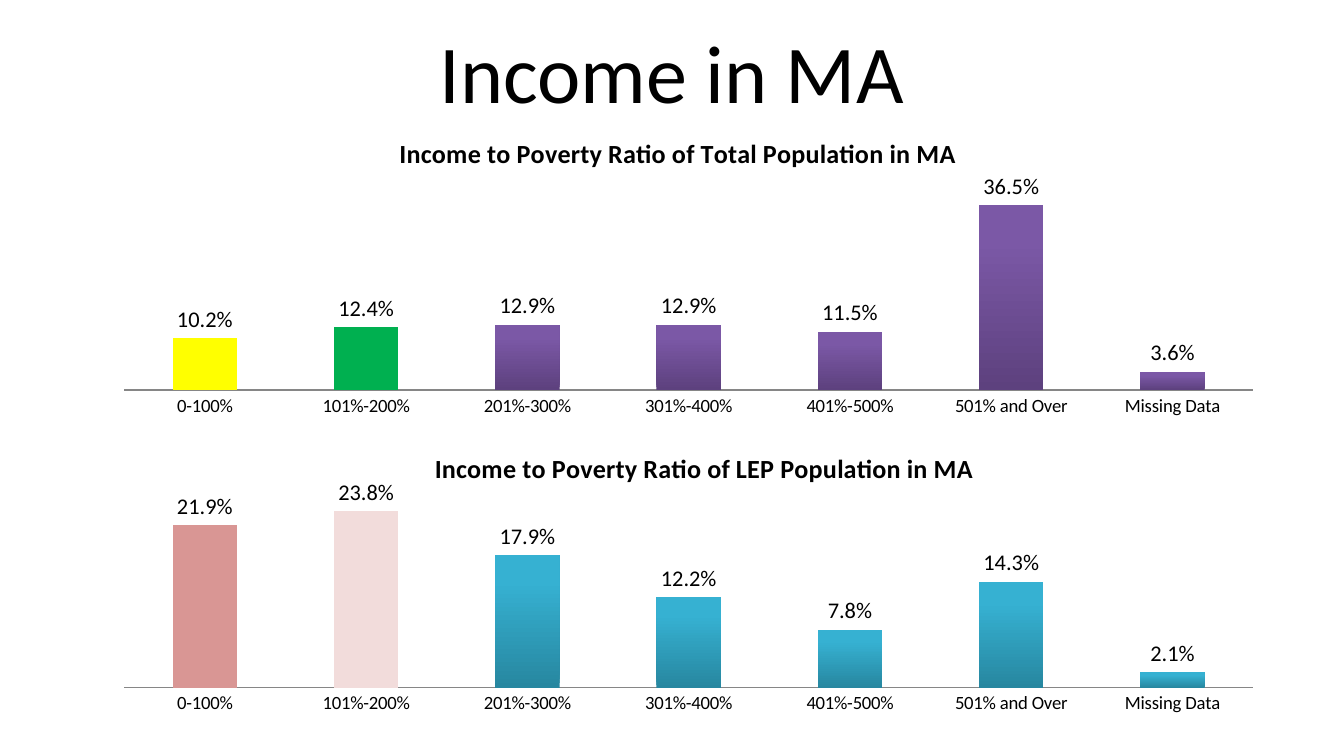
import pptx
import pptx.chart.data
import pptx.dml.color
import pptx.enum.chart
import pptx.enum.text
import pptx.oxml
import pptx.oxml.ns
import pptx.util

Inches = pptx.util.Inches
CATEGORIES = ["0-100%", "101%-200%", "201%-300%", "301%-400%",
              "401%-500%", "501% and Over", "Missing Data"]


def rgb(value):
    return pptx.dml.color.RGBColor.from_string(value)


def style_font(font, size, color="000000", name="Calibri", bold=False):
    font.size = pptx.util.Pt(size)
    font.name = name
    font.bold = bold
    font.color.rgb = rgb(color)


def write_text(tf, text, **style):
    p = tf.paragraphs[0]
    p.alignment = pptx.enum.text.PP_ALIGN.CENTER
    r = p.add_run()
    r.text = text
    style_font(r.font, **style)


def set_layout(parent, index, inner=False, **fractions):
    for old in parent.findall(pptx.oxml.ns.qn("c:layout")):
        parent.remove(old)
    target = '<c:layoutTarget val="inner"/>' if inner else ""
    modes = '<c:xMode val="edge"/><c:yMode val="edge"/>'
    values = "".join(f'<c:{k} val="{v}"/>' for k, v in fractions.items())
    parent.insert(index, pptx.oxml.parse_xml(
        f'<c:layout {pptx.oxml.ns.nsdecls("c")}><c:manualLayout>'
        f'{target}{modes}{values}</c:manualLayout></c:layout>'))


class SlideBuilder:
    def __init__(self, slide):
        self.s = slide

    def title(self, text, left, top, width, height):
        sp = self.s.shapes.add_textbox(
            Inches(left), Inches(top), Inches(width), Inches(height))
        tf = sp.text_frame
        tf.word_wrap = True
        tf.vertical_anchor = pptx.enum.text.MSO_ANCHOR.BOTTOM
        tf.margin_left = tf.margin_right = Inches(0.1)
        tf.margin_top = tf.margin_bottom = Inches(0.1)
        write_text(tf, text, size=44)

    def bar_chart(self, title, values, top, height, maximum, gradient,
                  highlights, title_at, plot_top):
        data = pptx.chart.data.CategoryChartData(number_format="0.0%")
        data.categories = CATEGORIES
        data.add_series("Series 1", values)
        chart = self.s.shapes.add_chart(
            pptx.enum.chart.XL_CHART_TYPE.COLUMN_CLUSTERED,
            Inches(0.75), Inches(top), Inches(8.75), Inches(height), data).chart
        style_font(chart.font, 10)
        chart.has_legend = False
        write_text(chart.chart_title.text_frame, title, size=14, bold=True)
        set_layout(chart.chart_title.element, 1, x=title_at[0], y=title_at[1])
        set_layout(chart.element.chart.plotArea, 0, inner=True,
                   x=0.02, y=plot_top, w=0.96, h=round(0.89 - plot_top, 2))
        self.axes(chart, maximum)
        self.bars(chart.plots[0], gradient, highlights)

    def axes(self, chart, maximum):
        axis = chart.category_axis
        axis.major_tick_mark = pptx.enum.chart.XL_TICK_MARK.NONE
        axis.format.line.color.rgb = rgb("868686")
        axis = chart.value_axis
        axis.minimum_scale = 0
        axis.maximum_scale = maximum
        axis.has_major_gridlines = False
        axis.tick_labels.number_format = "0.0%"
        axis.tick_labels.number_format_is_linked = False
        axis.visible = False

    def bars(self, plot, gradient, highlights):
        plot.gap_width = 150
        plot.overlap = -25
        plot.vary_by_categories = False
        series = plot.series[0]
        fill = series.format.fill
        fill.gradient()
        fill.gradient_angle = 90
        for stop, color, position in zip(fill.gradient_stops, gradient, (0, 0.8)):
            stop.color.rgb = rgb(color)
            stop.position = position
        for i, color in enumerate(highlights):
            fill = series.points[i].format.fill
            fill.solid()
            fill.fore_color.rgb = rgb(color)
        labels = series.data_labels
        labels.show_value = True
        labels.number_format = "0.0%"
        labels.number_format_is_linked = False
        labels.position = pptx.enum.chart.XL_LABEL_POSITION.OUTSIDE_END
        style_font(labels.font, 12)


def main():
    prs = pptx.Presentation()
    prs.slide_width = Inches(10)
    prs.slide_height = Inches(10 * 9 / 16)
    builder = SlideBuilder(prs.slides.add_slide(prs.slide_layouts[6]))
    builder.title("Income in MA", 0.5, 0.15, 9, 0.84)
    builder.bar_chart(
        "Income to Poverty Ratio of Total Population in MA",
        [0.102, 0.124, 0.129, 0.129, 0.115, 0.365, 0.036],
        top=0.9, height=2.25, maximum=0.4, gradient=("5D417E", "7B58A6"),
        highlights=("FFFF00", "00B050"), title_at=(0.25, 0.03), plot_top=0.22)
    builder.bar_chart(
        "Income to Poverty Ratio of LEP Population in MA",
        [0.219, 0.238, 0.179, 0.122, 0.078, 0.143, 0.021],
        top=3.23, height=2.12, maximum=0.25, gradient=("2787A0", "36B1D2"),
        highlights=("D99694", "F2DCDB"), title_at=(0.28, 0.04), plot_top=0.24)
    prs.save("out.pptx")


if __name__ == "__main__":
    main()
